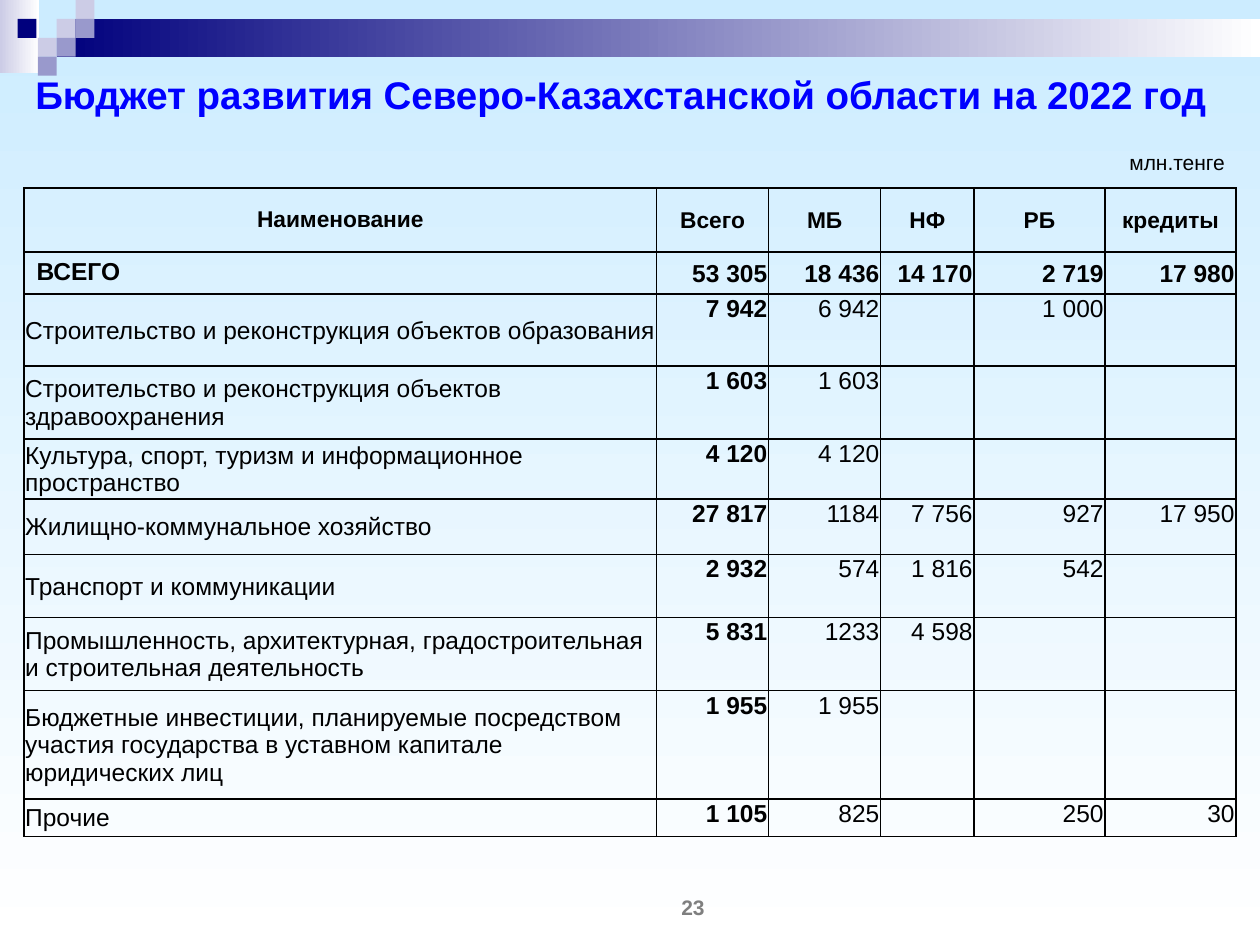
from lxml.etree import SubElement
from pptx import Presentation
from pptx.dml.color import RGBColor
from pptx.enum.shapes import MSO_SHAPE
from pptx.enum.text import MSO_ANCHOR, PP_ALIGN
from pptx.oxml import parse_xml
from pptx.oxml.ns import nsdecls, qn
from pptx.util import Inches, Pt

HUES = {"navy": "00007D", "lilac": "CCCCE6", "violet": "9999CC",
        "sky": "CCECFF", "white": "FFFFFF", "blue": "0000FF",
        "black": "000000", "gray": "7F7F7F"}
LEFT, MID, RIGHT = PP_ALIGN.LEFT, PP_ALIGN.CENTER, PP_ALIGN.RIGHT


def blend(fill, start, angle):
    """Fill with a gradient from the start colour to white."""
    fill.gradient()
    fill.gradient_angle = angle
    for stop, hue in zip(fill.gradient_stops, (start, "white")):
        stop.color.rgb = RGBColor.from_string(HUES[hue])


def write(frame, text, size, hue, bold, align):
    frame.word_wrap = True
    frame.text = text
    para = frame.paragraphs[0]
    para.alignment = align
    for run in para.runs:
        run.font.name = "Arial"
        run.font.size = Pt(size)
        run.font.bold = bold
        run.font.color.rgb = RGBColor.from_string(HUES[hue])


prs = Presentation()
prs.slide_width, prs.slide_height = Inches(10), Inches(7.5)
slide = prs.slides.add_slide(prs.slide_layouts[6])
blend(slide.background.fill, "sky", 270)

# Corner ornament: two fading bars, then small squares
UNIT = 0.15
bars = [(0, 0, 0.31, 0.58, "lilac", True),
        (0.45, 0.15, 9.55, 0.3, "navy", True)]
squares = [(3, 1, "lilac"), (4, 0, "lilac"), (4, 1, "violet"),
           (2, 2, "lilac"), (0.93, 1, "navy"), (3, 2, "violet"),
           (2, 3, "violet")]
bars += [(col * UNIT, row * UNIT, UNIT, UNIT, hue, False)
         for col, row, hue in squares]
for x, y, w, h, hue, fade in bars:
    bar = slide.shapes.add_shape(MSO_SHAPE.RECTANGLE, Inches(x), Inches(y),
                                 Inches(w), Inches(h))
    bar.shadow.inherit = False
    bar.line.fill.background()
    if fade:
        blend(bar.fill, hue, 0)
    else:
        bar.fill.solid()
        bar.fill.fore_color.rgb = RGBColor.from_string(HUES[hue])

# Title, page number and unit
labels = [
    (0.04, 0.45, 9.78, 0.59, "Бюджет развития Северо-Казахстанской области на 2022 год",
     22, "blue", True, MID),
    (4.5, 7.08, 2, 0.24, "23", 12, "gray", True, MID),
    (8.44, 1.17, 1.38, 0.24, "млн.тенге", 12, "black", False, RIGHT),
]
for x, y, w, h, *style in labels:
    box = slide.shapes.add_textbox(Inches(x), Inches(y), Inches(w), Inches(h))
    box.text_frame.vertical_anchor = MSO_ANCHOR.MIDDLE
    write(box.text_frame, *style)

# Budget table
widths = [5.02, 0.89, 0.89, 0.74, 1.04, 1.04]
heights = [0.51, 0.33, 0.57, 0.58, 0.45, 0.44, 0.5, 0.58, 0.86, 0.3]
rows = [
    ["Наименование", "Всего", "МБ", "НФ", "РБ", "кредиты"],
    ["ВСЕГО", "53 305", "18 436", "14 170", "2 719", "17 980"],
    ["Строительство и реконструкция объектов образования",
     "7 942", "6 942", "", "1 000", ""],
    ["Строительство и реконструкция объектов здравоохранения",
     "1 603", "1 603", "", "", ""],
    ["Культура, спорт, туризм и информационное пространство",
     "4 120", "4 120", "", "", ""],
    ["Жилищно-коммунальное хозяйство",
     "27 817", "1184", "7 756", "927", "17 950"],
    ["Транспорт и коммуникации", "2 932", "574", "1 816", "542", ""],
    ["Промышленность, архитектурная, градостроительная и строительная деятельность",
     "5 831", "1233", "4 598", "", ""],
    ["Бюджетные инвестиции, планируемые посредством участия государства "
     "в уставном капитале юридических лиц", "1 955", "1 955", "", "", ""],
    ["Прочие", "1 105", "825", "", "250", "30"],
]
table = slide.shapes.add_table(len(rows), len(widths), Inches(0.19), Inches(1.49),
                               Inches(sum(widths)), Inches(sum(heights))).table
table.first_row = table.horz_banding = False
for col, width in zip(table.columns, widths):
    col.width = Inches(width)
for row, height in zip(table.rows, heights):
    row.height = Inches(height)

for r, row in enumerate(rows):
    for c, text in enumerate(row):
        cell = table.cell(r, c)
        wide = c == 0 and r < 2
        cell.margin_left = cell.margin_right = Inches(0.1 if wide else 0.01)
        cell.margin_top = Inches(0.05 if wide else 0.01)
        cell.margin_bottom = Inches(0.05 if wide else 0)
        top = (r == 1 and c == 0) or (r > 1 and c > 0)
        cell.vertical_anchor = MSO_ANCHOR.TOP if top else MSO_ANCHOR.MIDDLE
        align = MID if r == 0 else RIGHT if c else LEFT
        write(cell.text_frame, text, 14 if r else 13, "black", r < 2 or c == 1, align)
        para = cell.text_frame.paragraphs[0]
        if wide:
            para.space_before = Pt(2.6)
        if not text:
            SubElement(para._p, qn("a:endParaRPr"), sz="1400")
        cell.fill.background()
        props = cell._tc.get_or_add_tcPr()
        for i, side in enumerate("LRTB"):
            props.insert(i, parse_xml(
                f'<a:ln{side} {nsdecls("a")} w="{Pt(1)}"><a:solidFill>'
                f'<a:srgbClr val="{HUES["black"]}"/></a:solidFill></a:ln{side}>'))

prs.save("out.pptx")
